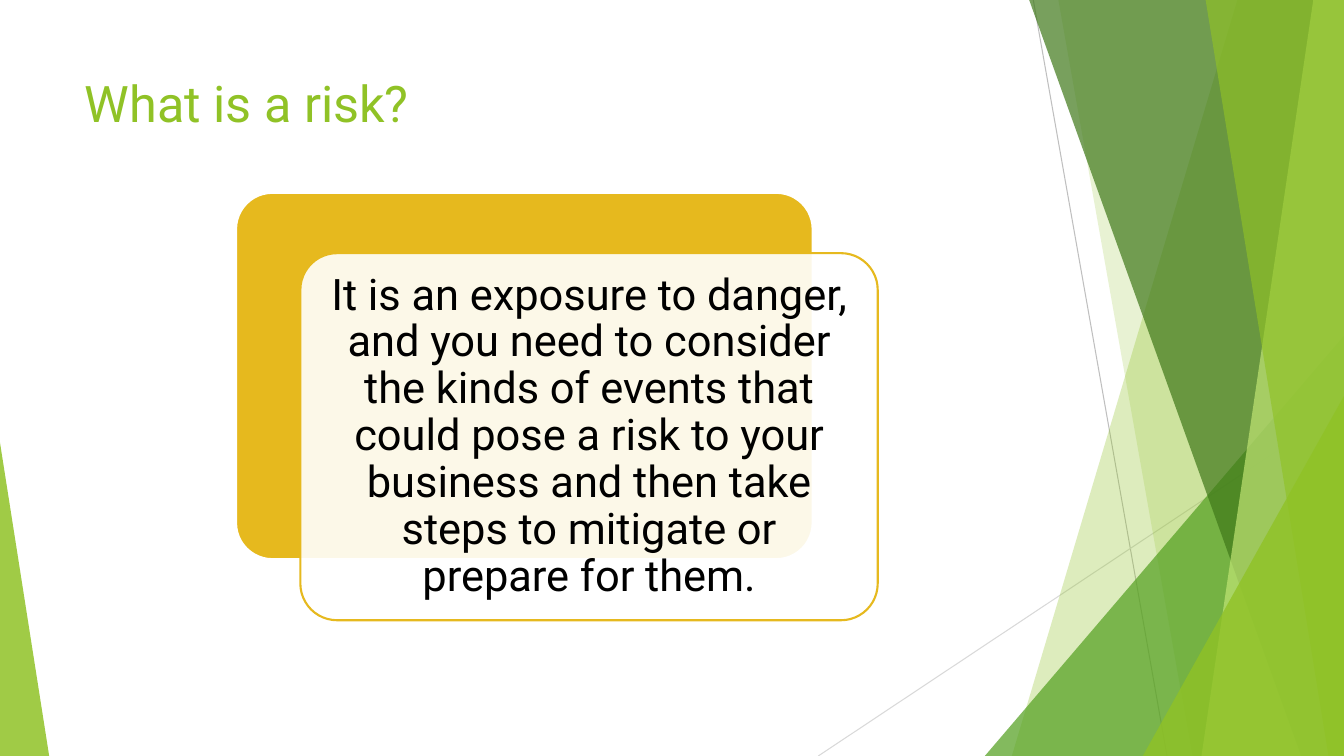
from lxml import etree
from pptx import Presentation
from pptx import util as u
from pptx.dml.color import RGBColor
from pptx.enum import shapes, text
from pptx.oxml import ns

COLORS = {
    "lime": "90C226",
    "leaf": "54A021",
    "forest": "3F7819",
    "pale": "C0E474",
    "gold": "E6B91E",
    "white": "FFFFFF",
    "black": "000000",
    "grey": "BFBFBF",
    "light_grey": "D9D9D9",
}
FONT = "Roboto"
WIDTH, HEIGHT = 33.87, 19.05
RIBBON_TOP = -0.02


def rgb(name):
    return RGBColor.from_string(COLORS[name])


def paint(shape, color, opacity=100):
    shape.shadow.inherit = False
    shape.fill.solid()
    shape.fill.fore_color.rgb = rgb(color)
    if opacity < 100:
        swatch = shape.fill._xPr.find(".//" + ns.qn("a:srgbClr"))
        etree.SubElement(swatch, ns.qn("a:alpha"), val=str(opacity * 1000))


def format_runs(paragraph, size, color):
    for run in paragraph.runs:
        run.font.name = FONT
        run.font.size = u.Pt(size)
        run.font.color.rgb = rgb(color)


def add_ray(slide, start, end, color):
    ray = slide.shapes.add_connector(
        shapes.MSO_CONNECTOR.STRAIGHT, *(u.Cm(value) for value in start + end))
    ray.line.color.rgb = rgb(color)
    ray.line.width = u.Pt(0.75)
    etree.SubElement(ray._element.spPr, ns.qn("a:effectLst"))


def add_ribbon(slide, top_x, bottom_x, color, opacity):
    outline = slide.shapes.build_freeform(u.Cm(top_x), u.Cm(RIBBON_TOP))
    corners = [(WIDTH, RIBBON_TOP), (WIDTH, HEIGHT), (bottom_x, HEIGHT)]
    outline.add_line_segments([(u.Cm(x), u.Cm(y)) for x, y in corners], close=True)
    ribbon = outline.convert_to_shape()
    paint(ribbon, color, opacity)
    ribbon.line.fill.background()


def add_wedge(slide, left, top, width, apex, color, opacity):
    wedge = slide.shapes.add_shape(
        shapes.MSO_SHAPE.ISOSCELES_TRIANGLE,
        u.Cm(left), u.Cm(top), u.Cm(width), u.Cm(HEIGHT - top))
    wedge.adjustments[0] = apex
    paint(wedge, color, opacity)
    wedge.line.fill.background()


def add_facets(slide):
    add_ray(slide, (26.04, 0), (29.41, HEIGHT), "grey")
    add_ray(slide, (WIDTH, 10.24), (20.62, HEIGHT), "light_grey")
    add_ribbon(slide, 31.19, 25.5, "lime", 30)
    add_ribbon(slide, 26.67, 30.05, "lime", 20)
    add_wedge(slide, 24.82, 8.46, 9.05, 1, "leaf", 72)
    add_ribbon(slide, 25.93, 32.79, "forest", 70)
    add_ribbon(slide, 33.1, 30.28, "pale", 70)
    add_ribbon(slide, 30.38, 33.48, "lime", 65)
    add_wedge(slide, 28.8, 9.98, 5.07, 1, "lime", 80)
    add_wedge(slide, 0, 11.15, 1.24, 0, "lime", 85)


def add_title(slide, wording):
    title = slide.shapes.title
    title.left, title.top = u.Cm(1.88), u.Cm(1.7)
    title.width, title.height = u.Cm(23.88), u.Cm(3.66)
    frame = title.text_frame
    frame.text = wording
    frame.vertical_anchor = text.MSO_ANCHOR.TOP
    frame.paragraphs[0].alignment = text.PP_ALIGN.LEFT
    format_runs(frame.paragraphs[0], 36, "lime")


def add_card(slide, left, top, fill, opacity, border, border_width):
    card = slide.shapes.add_shape(
        shapes.MSO_SHAPE.ROUNDED_RECTANGLE,
        u.Cm(left), u.Cm(top), u.Cm(14.55), u.Cm(9.25))
    card.adjustments[0] = 0.1
    paint(card, fill, opacity)
    card.line.color.rgb = rgb(border)
    card.line.width = u.Pt(border_width)
    return card


def write_definition(card, wording):
    frame = card.text_frame
    frame.text = wording
    frame.word_wrap = True
    frame.vertical_anchor = text.MSO_ANCHOR.MIDDLE
    frame.margin_left = frame.margin_right = u.Cm(0.33)
    frame.margin_top = frame.margin_bottom = u.Cm(0.33)
    definition = frame.paragraphs[0]
    definition.alignment = text.PP_ALIGN.CENTER
    definition.line_spacing = 0.9
    format_runs(definition, 31, "black")


def main():
    deck = Presentation()
    deck.slide_width, deck.slide_height = u.Cm(WIDTH), u.Cm(HEIGHT)
    slide = deck.slides.add_slide(deck.slide_layouts.get_by_name("Title Only"))
    add_facets(slide)
    add_title(slide, "What is a risk?")
    add_card(slide, 5.94, 4.85, "gold", 100, "white", 2)
    front_card = add_card(slide, 7.57, 6.38, "white", 90, "gold", 1.5)
    write_definition(
        front_card,
        "It is an exposure to danger, and you need to consider the kinds of "
        "events that could pose a risk to your business and then take steps "
        "to mitigate or prepare for them.")
    deck.save("out.pptx")


if __name__ == "__main__":
    main()
